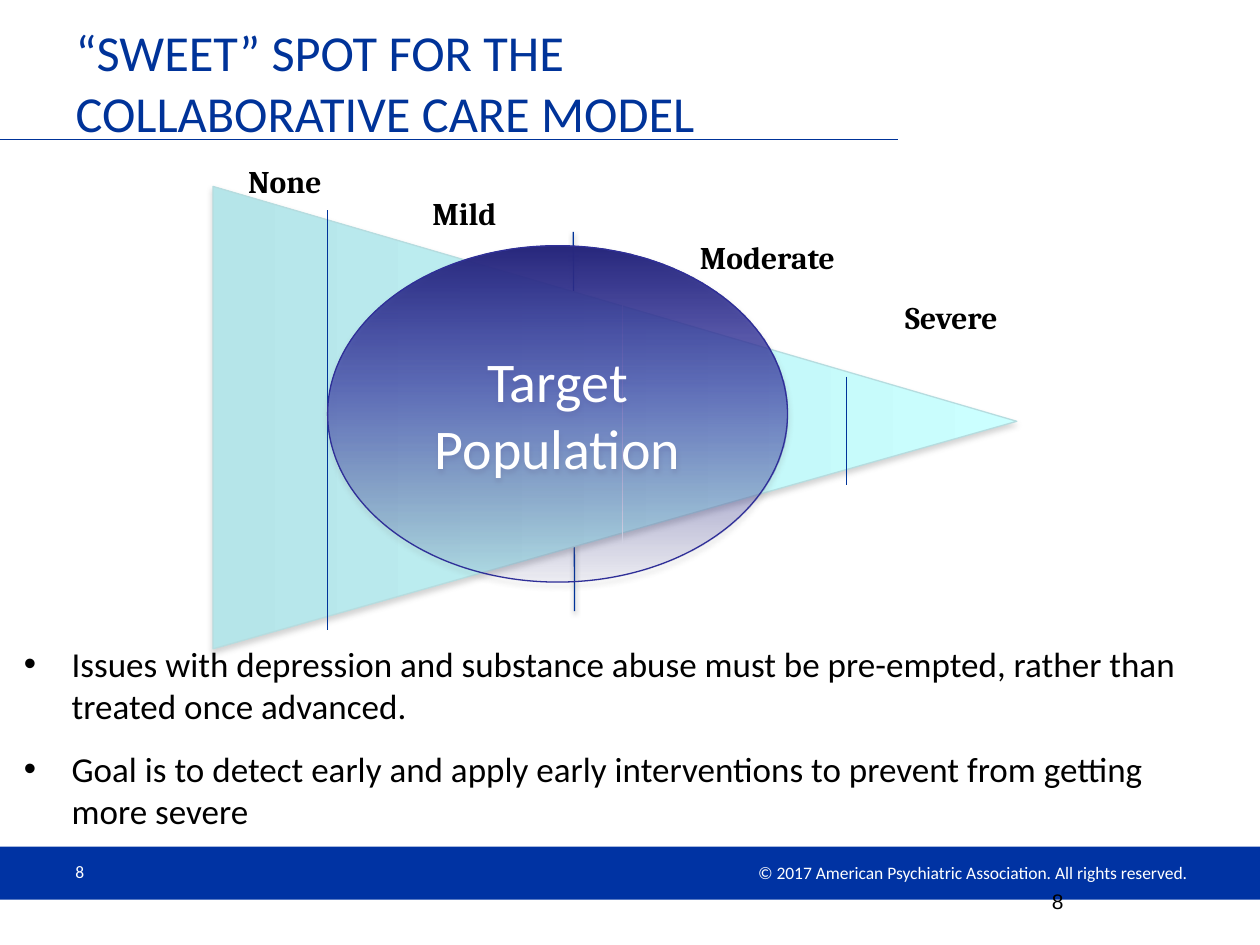
from lxml import etree
from pptx import Presentation
from pptx.dml.color import RGBColor
from pptx.enum.shapes import MSO_CONNECTOR, MSO_SHAPE
from pptx.enum.text import MSO_ANCHOR, PP_ALIGN
from pptx.oxml.ns import qn
from pptx.util import Inches, Pt

LEFT, CENTER, RIGHT = PP_ALIGN.LEFT, PP_ALIGN.CENTER, PP_ALIGN.RIGHT
TOP, MIDDLE = MSO_ANCHOR.TOP, MSO_ANCHOR.MIDDLE
RECTANGLE, OVAL, TRIANGLE = (MSO_SHAPE.RECTANGLE, MSO_SHAPE.OVAL,
                             MSO_SHAPE.ISOSCELES_TRIANGLE)
STRAIGHT = MSO_CONNECTOR.STRAIGHT

WIDTH, HEIGHT = 10, 7.5
NAVY, BAND, BLACK, WHITE = "003399", "0033A3", "000000", "FFFFFF"


def color(value):
    return RGBColor.from_string(value)


def inches(*values):
    return [Inches(value) for value in values]


def add_child(parent, tag, **attributes):
    return etree.SubElement(parent, qn(tag), {key: str(value) for key, value in attributes.items()})


def set_effects(shape, shadow=None):
    """Give a shape no effects, or a downward shadow (colour, opacity %, blur, distance)."""
    effects = add_child(shape._element.spPr, "a:effectLst")
    if shadow:
        shade, opacity, blur, distance = shadow
        outer = add_child(effects, "a:outerShdw", blurRad=Pt(blur), dist=Pt(distance),
                          dir=5400000, rotWithShape=0)
        tint = add_child(outer, "a:srgbClr", val=shade)
        add_child(tint, "a:alpha", val=opacity * 1000)


def set_gradient(shape, stops):
    """Fill from top to bottom with (position %, colour, opacity %) stops."""
    shape.fill.gradient()
    shape.fill.gradient_angle = 270
    stop_list = shape._element.spPr.find(qn("a:gradFill")).find(qn("a:gsLst"))
    for old_stop in list(stop_list):
        stop_list.remove(old_stop)
    for position, value, opacity in stops:
        stop = add_child(stop_list, "a:gs", pos=position * 1000)
        tint = add_child(stop, "a:srgbClr", val=value)
        if opacity < 100:
            add_child(tint, "a:alpha", val=opacity * 1000)


def format_text(shape, size, value, font="Calibri", align=LEFT, anchor=TOP, bold=False):
    frame = shape.text_frame
    frame.word_wrap = True
    frame.vertical_anchor = anchor
    for paragraph in frame.paragraphs:
        paragraph.alignment = align
        for run in paragraph.runs:
            run.font.size, run.font.name, run.font.bold = Pt(size), font, bold
            run.font.color.rgb = color(value)


def add_text(slide, box, text, size, value, **style):
    shape = slide.shapes.add_textbox(*inches(*box))
    shape.text_frame.text = text
    format_text(shape, size, value, **style)
    return shape


def add_line(slide, start, end, value=NAVY, shadow=None):
    line = slide.shapes.add_connector(STRAIGHT, *inches(*start, *end))
    line.line.color.rgb = color(value)
    line.line.width = Pt(0.75)
    set_effects(line, shadow)


def add_shape(slide, kind, box, outline):
    shape = slide.shapes.add_shape(kind, *inches(*box))
    shape.line.color.rgb = color(outline)
    shape.line.width = Pt(0.75)
    return shape


def build_header(slide, left, top, width, height):
    title = slide.shapes.title
    title.left, title.top, title.width, title.height = inches(left, top, width, height)
    title.text_frame.text = "“SWEET” SPOT FOR THE COLLABORATIVE CARE MODEL"
    format_text(title, 28.8, NAVY)
    add_line(slide, (0, 1.11), (left + width, 1.11))


def build_footer(slide, left, top, width, height):
    band = slide.shapes.add_shape(RECTANGLE, *inches(left, top, width, height))
    band.shadow.inherit = False
    band.fill.solid()
    band.fill.fore_color.rgb = color(BAND)
    band.line.fill.background()
    add_text(slide, (left + 0.05 * width, top, 2.33, 0.4), "8", 10, WHITE, anchor=MIDDLE)
    add_text(slide, (left + 0.52 * width, top + 0.07, 4.35, 0.27),
             "© 2017 American Psychiatric Association. All rights reserved.\u00a0",
             10, WHITE, align=RIGHT, anchor=MIDDLE)
    add_text(slide, (left + 0.825 * width, top + 0.23, 1.75, 0.4), "8", 12, BLACK,
             font="Arial", anchor=MIDDLE)


def build_severity_diagram(slide, left, top, width, height):
    # Divider between mild and moderate, behind the wedge
    add_line(slide, (left + 2.86, top + 0.36), (left + 2.87, top + 3.37),
             shadow=(BLACK, 38, 3.1, 1.6))

    # Wedge pointing right: an upright triangle turned about the box's centre
    wedge = add_shape(slide, TRIANGLE, (left + (width - height) / 2, top + (height - width) / 2,
                                        height, width), "B6DCDF")
    wedge.rotation = 90
    wedge.adjustments[0] = 0.508
    set_gradient(wedge, [(0, "CBFFFF", 100), (100, "B5E5E9", 100)])
    set_effects(wedge, ("808080", 35, 3.1, 1.8))

    # Dividers in front of the wedge: offset, upper end, lower end, colour
    for x, upper, lower, value in [(0.91, 0.19, 3.52, NAVY), (3.25, 0.94, 3.19, WHITE),
                                   (5.03, 1.51, 2.37, NAVY)]:
        add_line(slide, (left + x, top + upper), (left + x, top + lower), value)

    # Severity levels: offset, drop and width of each label
    for label, x, y, label_width in [("None", 0.01, -0.24, 1.12), ("Mild", 1.34, 0.01, 1.31),
                                     ("Moderate", 3.68, 0.36, 1.44),
                                     ("Severe", 5.3, 0.84, 1.12)]:
        add_text(slide, (left + x, top + y, label_width, 0.4), label, 18, BLACK,
                 font="Cambria", align=CENTER, bold=True)

    # Target population
    target = add_shape(slide, OVAL, (left + 0.91, top + 0.47, 3.65, 2.67), "2F2F98")
    set_gradient(target, [(0, "28287C", 100), (27, "2B2B97", 75), (45, "2A2AA2", 58),
                          (55, "2A2AA2", 48), (70, "2B2B97", 34), (100, "28287C", 6)])
    set_effects(target, ("808080", 35, 3.1, 1.8))
    target.text_frame.text = "Target Population"
    format_text(target, 32, WHITE, align=CENTER, anchor=MIDDLE)


def build_points(slide, left, top, width, height):
    points = ["Issues with depression and substance abuse must be pre-empted, "
              "rather than treated once advanced.",
              "Goal is to detect early and apply early interventions to prevent "
              "from getting more severe"]
    body = add_text(slide, (left, top, width, height), "\n".join(points), 20, BLACK)
    for index, paragraph in enumerate(body.text_frame.paragraphs):
        properties = paragraph._p.get_or_add_pPr()
        properties.set("marL", str(Inches(0.38)))
        properties.set("indent", str(-Inches(0.38)))
        add_child(properties, "a:buFont", typeface="Arial")
        add_child(properties, "a:buChar", char="•")
        paragraph.space_before = Pt(6 if index else 0)
        paragraph.space_after = Pt(6)


def main():
    presentation = Presentation()
    presentation.slide_width, presentation.slide_height = inches(WIDTH, HEIGHT)
    slide = presentation.slides.add_slide(presentation.slide_layouts[5])
    build_footer(slide, 0, 6.72, WIDTH, 0.42)
    build_header(slide, 0.05 * WIDTH, 0.12, 6.63, 0.64)
    build_severity_diagram(slide, 1.69, 1.48, 6.38, 3.67)
    build_points(slide, 0.09, 5.05, 9.72, 1.7)
    presentation.save("out.pptx")


if __name__ == "__main__":
    main()
